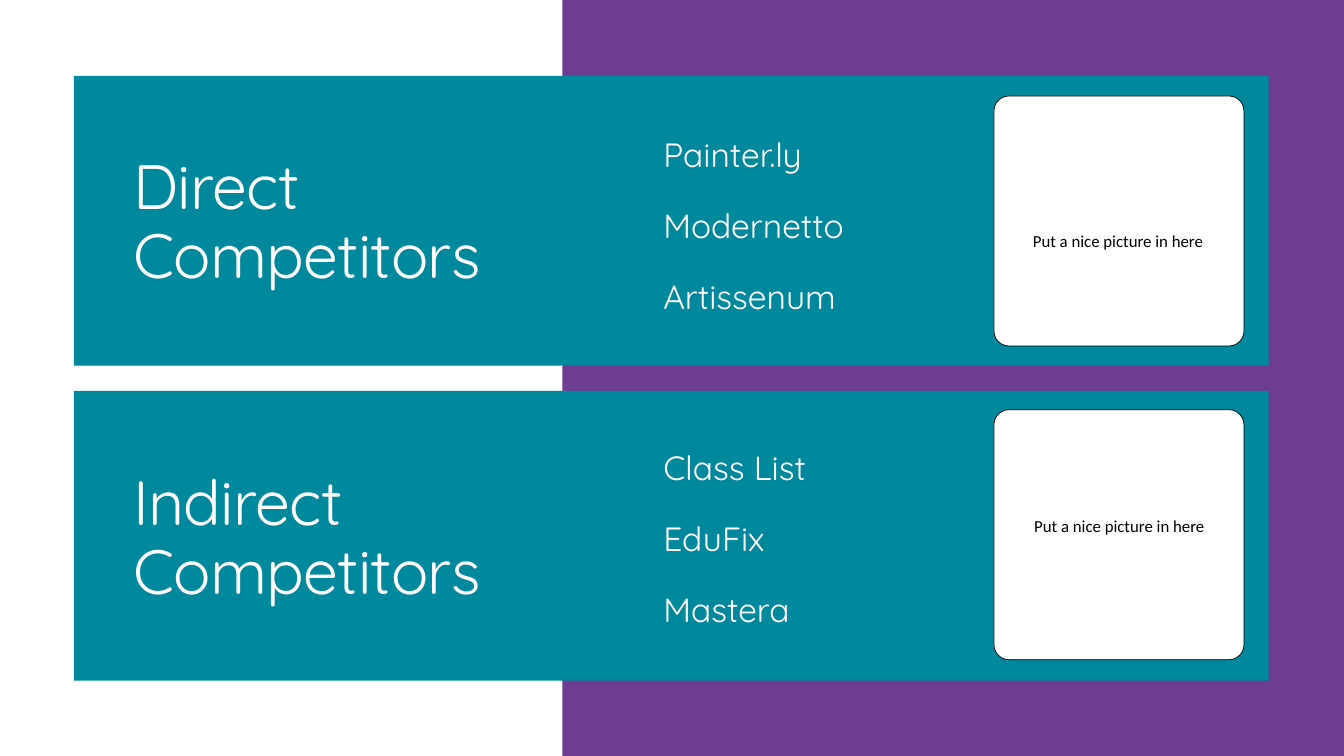
from lxml.etree import SubElement
from pptx import Presentation
from pptx.dml.color import RGBColor
from pptx.enum.shapes import MSO_SHAPE as Preset
from pptx.enum.text import MSO_ANCHOR as Anchor, MSO_AUTO_SIZE as AutoSize, PP_ALIGN as Align
from pptx.oxml.ns import qn
from pptx.util import Cm, Pt

WHITE, BLACK, PURPLE, TEAL = "FFFFFF", "000000", "6C3D91", "00889C"
WIDTH, HEIGHT = 50.8, 28.58
PURPLE_LEFT = 21.26
CAPTION = "Put a nice picture in here"
SECTIONS = [
    {
        "heading": "Direct Competitors",
        "names": ["Painter.ly", "Modernetto", "Artissenum"],
        "band": (2.79, 2.87, 45.16, 10.95),
        "heading_box": (5.05, 5.79, 17.4, 5.23),
        "names_box": (25.07, 4.8, 10.41, 7),
        "card": (37.57, 3.63, 9.45, 9.45),
        "caption_box": (38.79, 8.59, 9.7, 1.02),
    },
    {
        "heading": "Indirect Competitors",
        "names": ["Class List", "EduFix", "Mastera"],
        "band": (2.79, 14.78, 45.16, 10.95),
        "heading_box": (5.05, 17.73, 17.4, 5.23),
        "names_box": (25.07, 16.64, 10.41, 7),
        "card": (37.57, 15.49, 9.45, 9.45),
        "caption_box": (38.84, 19.38, 9.7, 1.02),
    },
]
HEADING_FONT = {"name": "Quicksand", "size": Pt(67), "bold": False}
NAMES_FONT = {"name": "Quicksand", "size": Pt(36), "bold": False}
CAPTION_FONT = {"name": "Calibri", "size": Pt(18)}
HEADING_SPACING = {"alignment": Align.LEFT, "line_spacing": Pt(73.7)}
NAMES_SPACING = {"alignment": Align.LEFT, "line_spacing": Pt(50.4),
                 "space_before": Pt(0), "space_after": Pt(25.6)}
FRAME = {"word_wrap": True, "auto_size": AutoSize.NONE, "vertical_anchor": Anchor.TOP}
NO_MARGINS = dict.fromkeys(("margin_left", "margin_top", "margin_right", "margin_bottom"), 0)


def apply(target, values):
    for name, value in values.items():
        setattr(target, name, value)


def paint(color_format, color):
    color_format.rgb = RGBColor.from_string(color)


def add_block(slide, preset, box, color):
    shape = slide.shapes.add_shape(preset, *map(Cm, box))
    shape.shadow.inherit = False
    shape.fill.solid()
    paint(shape.fill.fore_color, color)
    shape.line.fill.background()
    return shape


def add_card(slide, box):
    card = add_block(slide, Preset.ROUNDED_RECTANGLE, box, WHITE)
    card.adjustments[0] = 0.06
    card.line.width = Pt(0.75)
    paint(card.line.color, BLACK)


def write(shape, box, lines, font, color, spacing, margins):
    apply(shape, dict(zip(("left", "top", "width", "height"), map(Cm, box))))
    frame = shape.text_frame
    apply(frame, {**FRAME, **margins})
    frame.text = "\n".join(lines)
    for paragraph in frame.paragraphs:
        apply(paragraph, spacing)
        for run in paragraph.runs:
            apply(run.font, font)
            paint(run.font.color, color)


def tighten(shape):
    for run in shape.text_frame.paragraphs[0].runs:
        run.font._element.set("spc", "-70")


def remove_bullets(shape):
    for paragraph in shape.text_frame.paragraphs:
        properties = paragraph._p.get_or_add_pPr()
        properties.set("marL", "0")
        properties.set("indent", "0")
        SubElement(properties, qn("a:buNone"))


def bring_to_front(shape):
    shape.element.getparent().append(shape.element)


def main():
    """Build the slide of direct and indirect competitors."""
    presentation = Presentation()
    presentation.slide_width, presentation.slide_height = Cm(WIDTH), Cm(HEIGHT)
    slide = presentation.slides.add_slide(presentation.slide_layouts.get_by_name("Two Content"))
    title, *bodies = slide.placeholders
    add_block(slide, Preset.RECTANGLE, (PURPLE_LEFT, 0, WIDTH - PURPLE_LEFT, HEIGHT), PURPLE)
    for section in SECTIONS:
        add_block(slide, Preset.RECTANGLE, section["band"], TEAL)
        add_card(slide, section["card"])

    headings = [title, slide.shapes.add_textbox(0, 0, 0, 0)]
    for section, heading, body in zip(SECTIONS, headings, bodies):
        write(heading, section["heading_box"], [section["heading"]],
              HEADING_FONT, WHITE, HEADING_SPACING, NO_MARGINS)
        tighten(heading)
        write(body, section["names_box"], section["names"],
              NAMES_FONT, WHITE, NAMES_SPACING, NO_MARGINS)
        remove_bullets(body)
        bring_to_front(heading)
        bring_to_front(body)
        caption = slide.shapes.add_textbox(0, 0, 0, 0)
        write(caption, section["caption_box"], [CAPTION], CAPTION_FONT, BLACK, {}, {})
    presentation.save("out.pptx")


if __name__ == "__main__":
    main()
